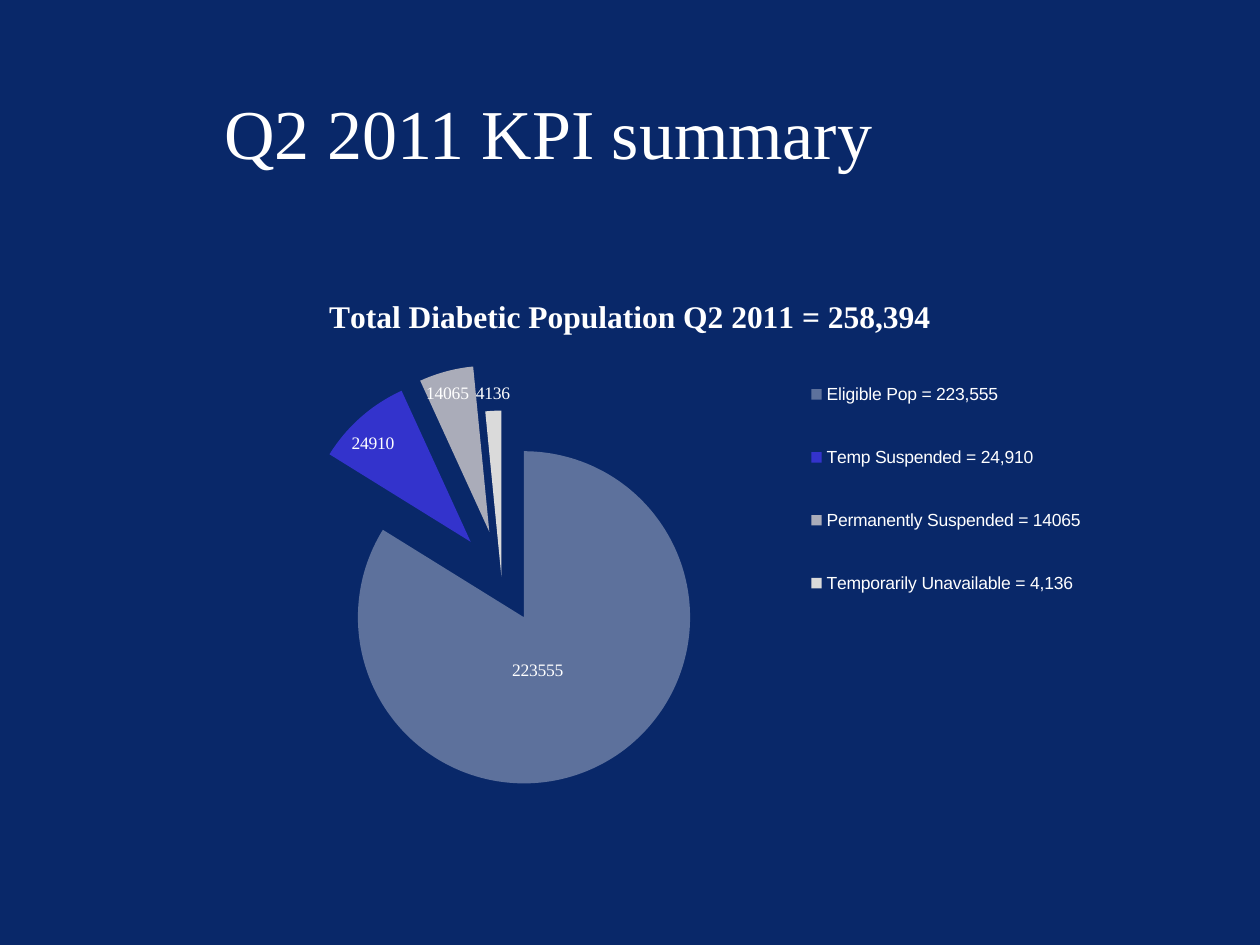
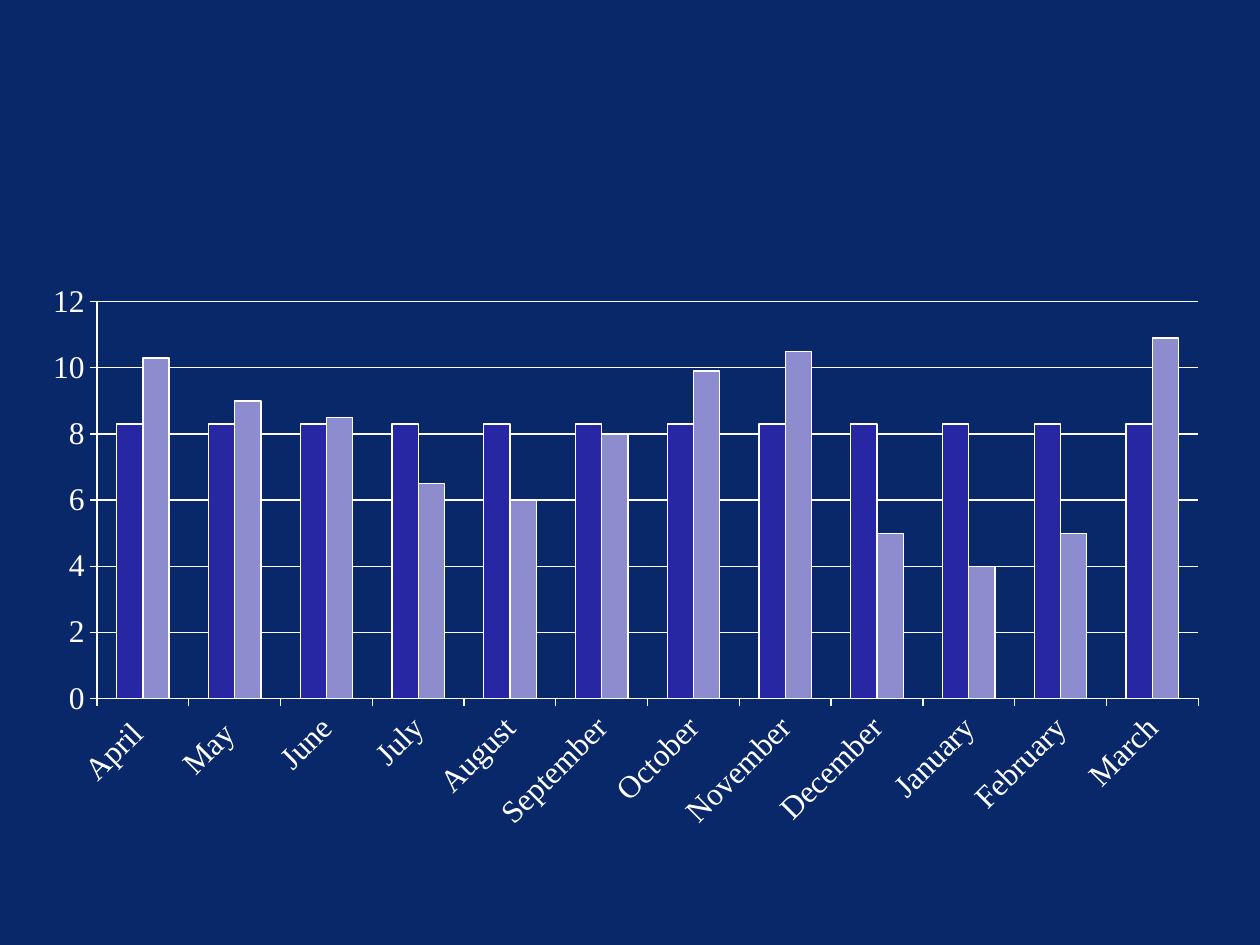
from dataclasses import dataclass
from typing import NamedTuple

from lxml import etree
from pptx import Presentation
from pptx.chart.chart import Chart
from pptx.chart.data import CategoryChartData
from pptx.dml.color import RGBColor
from pptx.enum.chart import (XL_CHART_TYPE, XL_LABEL_POSITION,
                             XL_LEGEND_POSITION, XL_TICK_MARK)
from pptx.enum.text import MSO_ANCHOR, PP_ALIGN
from pptx.oxml.ns import qn
from pptx.slide import Slide
from pptx.util import Emu, Inches, Pt

PIE, COLUMN = XL_CHART_TYPE.PIE, XL_CHART_TYPE.COLUMN_CLUSTERED
BEST_FIT = XL_LABEL_POSITION.BEST_FIT
RIGHT = XL_LEGEND_POSITION.RIGHT
OUTSIDE = XL_TICK_MARK.OUTSIDE
CENTER, MIDDLE = PP_ALIGN.CENTER, MSO_ANCHOR.MIDDLE
TITLE_ONLY, BLANK = 5, 6
WIDTH, HEIGHT = Inches(10), Inches(7.5)
TOP, TALL = 2.17 / 7.5, 0.6


@dataclass(frozen=True)
class Theme:
    back: str = "092869"
    ink: str = "FFFFFF"
    serif: str = "Times New Roman"
    sans: str = "Arial"
    title: int = 40
    head: int = 18
    axis: int = 18
    small: int = 10


class Box(NamedTuple):
    """Left, top, width and height as shares of the parent's size."""
    left: float
    top: float
    width: float
    height: float


class Slice(NamedTuple):
    name: str
    count: int
    color: str


class Bars(NamedTuple):
    name: str
    color: str
    values: tuple[float, ...]


THEME = Theme()
HEAD = "Total Diabetic Population Q2 2011 = 258,394"
BURST = 28
SLICES = (
    Slice("Eligible Pop = 223,555", 223555, "5D719C"),
    Slice("Temp Suspended = 24,910", 24910, "3333CC"),
    Slice("Permanently Suspended = 14065", 14065, "AAACB9"),
    Slice("Temporarily Unavailable = 4,136", 4136, "DADADA"),
)
MONTHS = ("April ", "May ", "June", "July", "August", "September", "October",
          "November", "December", "January", "February", "March")
SERIES = (
    Bars("Series 1", "2727A3", (8.3,) * len(MONTHS)),
    Bars("Series 2", "8C8CCF",
         (10.3, 9, 8.5, 6.5, 6, 8, 9.9, 10.5, 5, 4, 5, 10.9)),
)


def rgb(code: str) -> RGBColor:
    return RGBColor.from_string(code)


def style(font, size: int, face: str = THEME.serif, bold: bool = False) -> None:
    font.size, font.name, font.bold = Pt(size), face, bold
    font.color.rgb = rgb(THEME.ink)


def fill(part, color: str) -> None:
    part.fill.solid()
    part.fill.fore_color.rgb = rgb(color)


def rule(line) -> None:
    line.color.rgb = rgb(THEME.ink)
    line.width = Pt(0.75)


def place(box: Box) -> tuple[Emu, Emu, Emu, Emu]:
    return (Emu(int(box.left * WIDTH)), Emu(int(box.top * HEIGHT)),
            Emu(int(box.width * WIDTH)), Emu(int(box.height * HEIGHT)))


def lay_out(parent, index: int, inner: bool = False, **shares: float) -> None:
    """Give a chart part a manual layout, as child number index."""
    for old in parent.findall(qn("c:layout")):
        parent.remove(old)
    layout = etree.Element(qn("c:layout"))
    manual = etree.SubElement(layout, qn("c:manualLayout"))
    pairs = [("layoutTarget", "inner")] if inner else []
    if "w" in shares:
        pairs += [("xMode", "edge"), ("yMode", "edge")]
    for tag, value in pairs + list(shares.items()):
        etree.SubElement(manual, qn(f"c:{tag}")).set("val", str(value))
    parent.insert(index, layout)


def set_plot(chart: Chart, box: Box) -> None:
    area = chart._chartSpace.chart.plotArea
    lay_out(area, 0, True, x=box.left, y=box.top, w=box.width, h=box.height)


def explode(before, share: int) -> None:
    """Pull slices out by a share of the radius, written ahead of a node."""
    burst = etree.Element(qn("c:explosion"))
    burst.set("val", str(share))
    before.addprevious(burst)


def add_chart(slide: Slide, kind, box: Box, names, series) -> Chart:
    data = CategoryChartData()
    data.categories = names
    for name, values in series:
        data.add_series(name, values)
    return slide.shapes.add_chart(kind, *place(box), data).chart


def add_title(slide: Slide, text: str, box: Box) -> None:
    title = slide.shapes.title
    title.left, title.top, title.width, title.height = place(box)
    frame = title.text_frame
    frame.text, frame.vertical_anchor = text, MIDDLE
    line = frame.paragraphs[0]
    line.alignment = CENTER
    style(line.font, THEME.title)


def add_pie(slide: Slide) -> None:
    chart = add_chart(slide, PIE, Box(0.075, TOP, 0.85, TALL),
                      [s.name for s in SLICES],
                      [(HEAD, [s.count for s in SLICES])])
    style(chart.font, THEME.small)
    chart.has_title = True
    frame = chart.chart_title.text_frame
    frame.text = HEAD
    style(frame.paragraphs[0].font, THEME.head, bold=True)
    set_plot(chart, Box(0.17, 0.16, 0.42, 0.75))

    chart.has_legend = True
    legend = chart.legend
    legend.position, legend.include_in_layout = RIGHT, False
    style(legend.font, THEME.small, THEME.sans)
    lay_out(legend._element, 1, x=0.65, y=0.12, w=0.29, h=0.52)

    chart.plots[0].vary_by_categories = True
    series = chart.plots[0].series[0]
    for index, item in enumerate(SLICES):
        form = series.points[index].format
        fill(form, item.color)
        form.line.fill.background()
    points = series._element.xpath("c:dPt")
    explode(points[0], BURST)
    explode(points[-1].find(qn("c:spPr")), 0)

    labels = series.data_labels
    labels.show_value, labels.position = True, BEST_FIT
    style(labels.font, THEME.small)
    main = series.points[0].data_label
    style(main.font, THEME.small)
    main.position = BEST_FIT
    lay_out(series._element.xpath("c:dLbls/c:dLbl")[0], 1, x=-0.09, y=-0.19)


def add_bars(slide: Slide) -> None:
    chart = add_chart(slide, COLUMN, Box(0.02, TOP, 0.95, TALL), MONTHS,
                      [(s.name, s.values) for s in SERIES])
    style(chart.font, THEME.axis)
    chart.has_title = chart.has_legend = False
    set_plot(chart, Box(0.06, 0.05, 0.92, 0.7))
    plot = chart.plots[0]
    plot.gap_width, plot.overlap, plot.vary_by_categories = 150, 0, False
    for series, item in zip(plot.series, SERIES):
        fill(series.format, item.color)
        rule(series.format.line)
    for axis in (chart.category_axis, chart.value_axis):
        axis.major_tick_mark = OUTSIDE
        rule(axis.format.line)
        style(axis.tick_labels.font, THEME.axis)
    text = chart.category_axis._element.find(qn("c:txPr"))
    text.find(qn("a:bodyPr")).set("rot", str(-45 * 60000))
    scale = chart.value_axis
    scale.minimum_scale, scale.maximum_scale, scale.major_unit = 0, 12, 2
    scale.has_major_gridlines = True
    rule(scale.major_gridlines.format.line)


def main() -> None:
    deck = Presentation()
    deck.slide_width, deck.slide_height = WIDTH, HEIGHT
    fill(deck.slide_master.background, THEME.back)
    layouts = deck.slide_layouts

    summary = deck.slides.add_slide(layouts[TITLE_ONLY])
    add_title(summary, "Q2 2011 KPI summary ", Box(0.067, 0.056, 0.75, 0.167))
    add_pie(summary)
    add_bars(deck.slides.add_slide(layouts[BLANK]))
    deck.save("out.pptx")


if __name__ == "__main__":
    main()
